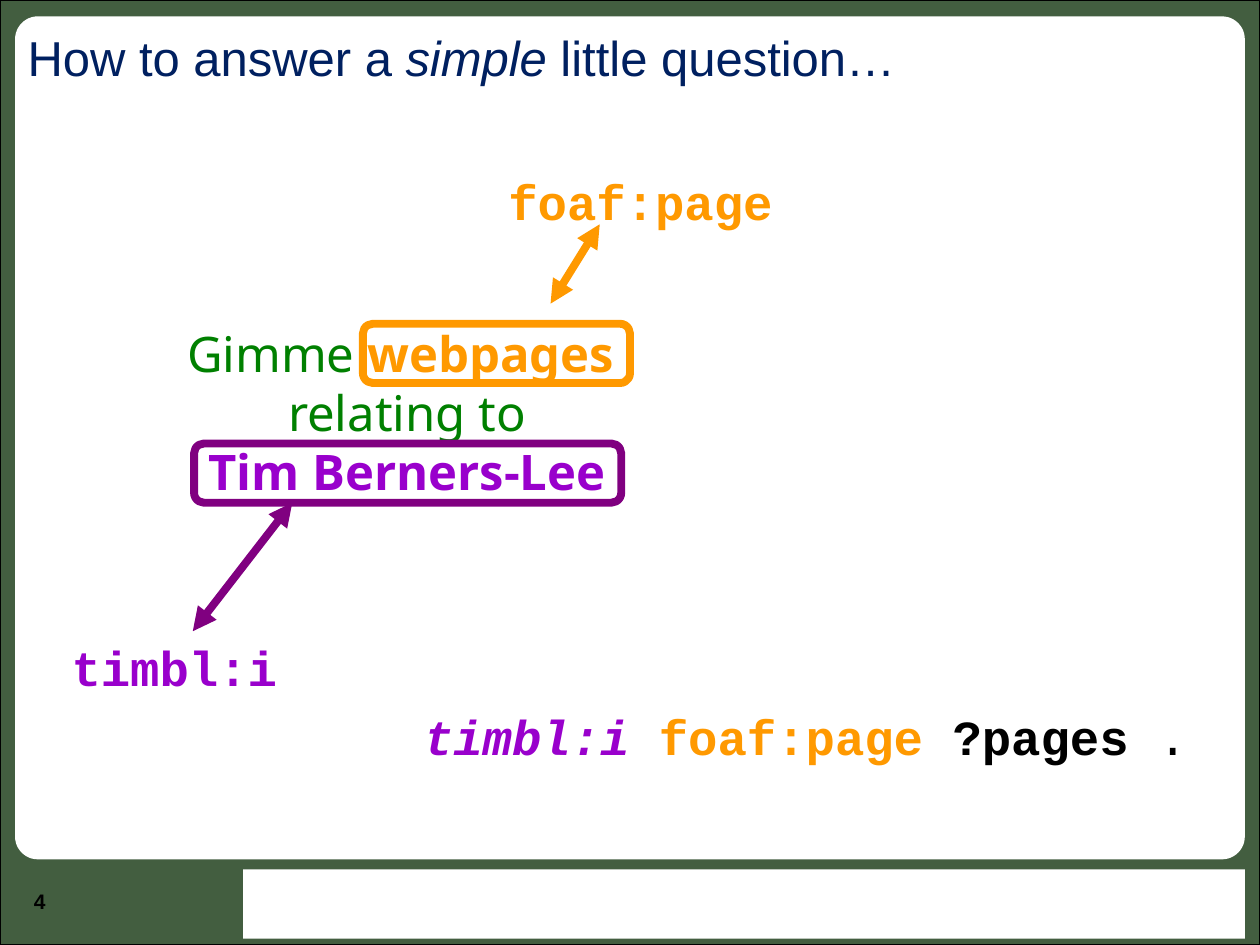
import dataclasses

import lxml.etree
import pptx
import pptx.dml.color
import pptx.enum.shapes
import pptx.enum.text
import pptx.oxml.ns
import pptx.util

SHAPE = pptx.enum.shapes.MSO_SHAPE
ALIGN = pptx.enum.text.PP_ALIGN
ANCHOR = pptx.enum.text.MSO_ANCHOR


@dataclasses.dataclass
class Theme:
    frame: str = "435E40"
    paper: str = "FFFFFF"
    ink: str = "000000"
    title: str = "002060"
    green: str = "008000"
    orange: str = "FF9900"
    violet: str = "9900CC"
    purple: str = "800080"
    sans: str = "Arial"
    speech: str = "Noto Sans"
    code: str = "Courier New"
    body: int = 28
    small: int = 12
    thin: float = 0.75
    thick: float = 4.5


def rgb(color):
    return pptx.dml.color.RGBColor.from_string(color)


def write(para, text, font="Arial", size=28, color="000000", bold=False, italic=False):
    """Add one formatted run to a paragraph."""
    run = para.add_run()
    run.text = text
    run.font.name = font
    run.font.size = pptx.util.Pt(size)
    run.font.color.rgb = rgb(color)
    run.font.bold = bold
    run.font.italic = italic


class Page:
    """A slide laid out on a grid of 100 columns and 75 rows."""

    def __init__(self, deck, theme):
        self.theme = theme
        self.slide = deck.slides.add_slide(deck.slide_layouts[6])
        self.col = deck.slide_width / 100
        self.row = deck.slide_height / 75

    def place(self, x, y):
        return round(x * self.col), round(y * self.row)

    def shape(self, kind, x, y, w, h, fill=None, line=None, width=1, round_off=None):
        item = self.slide.shapes.add_shape(kind, *self.place(x, y), *self.place(w, h))
        item.shadow.inherit = False
        if round_off is not None:
            item.adjustments[0] = round_off
        if fill:
            item.fill.solid()
            item.fill.fore_color.rgb = rgb(fill)
        else:
            item.fill.background()
        if line:
            item.line.color.rgb = rgb(line)
            item.line.width = pptx.util.Pt(width)
        else:
            item.line.fill.background()

    def text(self, x, y, w, h, lines, align=ALIGN.CENTER, anchor=ANCHOR.TOP,
             inset=(1, 0.5), lead=None, **style):
        """Each line is a list of (text, format) runs over the shared style."""
        box = self.slide.shapes.add_textbox(*self.place(x, y), *self.place(w, h))
        frame = box.text_frame
        frame.word_wrap = True
        frame.vertical_anchor = anchor
        side, top = self.place(*inset)
        frame.margin_left = frame.margin_right = side
        frame.margin_top = frame.margin_bottom = top
        for i, runs in enumerate(lines):
            para = frame.add_paragraph() if i else frame.paragraphs[0]
            para.alignment = align
            if lead:
                para.line_spacing = pptx.util.Pt(lead)
            for words, extra in runs:
                write(para, words, **{**style, **extra})

    def arrow(self, start, end, color):
        """Draw a line with a head at both ends."""
        kind = pptx.enum.shapes.MSO_CONNECTOR.STRAIGHT
        item = self.slide.shapes.add_connector(kind, *self.place(*start), *self.place(*end))
        item.line.color.rgb = rgb(color)
        item.line.width = pptx.util.Pt(self.theme.thick)
        stroke = item.line._get_or_add_ln()
        for tip in ("a:headEnd", "a:tailEnd"):
            lxml.etree.SubElement(stroke, pptx.oxml.ns.qn(tip), type="triangle")
        lxml.etree.SubElement(item._element.spPr, pptx.oxml.ns.qn("a:effectLst"))

    def label(self, x, y, w, runs):
        self.text(x, y, w, 5.7, [runs], font=self.theme.code, size=self.theme.body, bold=True)

    def mark(self, x, y, w, color):
        self.shape(SHAPE.FLOWCHART_ALTERNATE_PROCESS, x, y, w, 4.7,
                   line=color, width=self.theme.thick)


def main():
    deck = pptx.Presentation()
    deck.slide_width = pptx.util.Inches(10)
    deck.slide_height = pptx.util.Inches(7.5)
    theme = Theme()
    page = Page(deck, theme)
    orange, violet = {"color": theme.orange}, {"color": theme.violet}

    page.shape(SHAPE.RECTANGLE, 0, 0, 100, 75, theme.frame, theme.ink, theme.thin)
    page.shape(SHAPE.ROUNDED_RECTANGLE, 1.2, 1.3, 97.6, 66.9, theme.paper, round_off=0.027)
    page.text(2.7, 70.5, 3.6, 2.4, [[("4", {})]], align=ALIGN.LEFT, inset=(0, 0),
              font=theme.sans, size=theme.small, color=theme.ink, bold=True)
    page.shape(SHAPE.RECTANGLE, 19.3, 69, 79.5, 5.5, theme.paper)

    page.text(1.2, 0, 100.8, 9.1,
              [[("How to answer a ", {}), ("simple", {"italic": True}),
                (" little question…", {})]],
              align=ALIGN.LEFT, anchor=ANCHOR.MIDDLE,
              font=theme.sans, size=theme.body, color=theme.title)

    page.text(2, 24.9, 60.6, 15,
              [[("Gimme ", {}), ("webpages ", {**orange, "bold": True})],
               [("relating to", {})],
               [("Tim Berners-Lee", {**violet, "bold": True})]],
              inset=(1, 0.8), lead=33.7,
              font=theme.speech, size=theme.body, color=theme.green)

    page.label(32.7, 13.1, 38.6, [("foaf:page ", orange)])
    page.label(-4.3, 50.1, 38.6, [("timbl:i ", violet)])
    page.arrow((47.6, 17.8), (43.7, 24.1), theme.orange)
    page.mark(28.8, 25.7, 21.2, theme.orange)
    page.arrow((23.2, 39.9), (15.3, 50.1), theme.purple)
    page.mark(15.4, 35.2, 33.9, theme.purple)
    page.label(31.1, 55.6, 65.7,
               [("timbl:i ", {**violet, "italic": True}), ("foaf:page ", orange),
                ("?pages", {}), (" .", {"bold": False})])

    deck.save("out.pptx")


if __name__ == "__main__":
    main()
